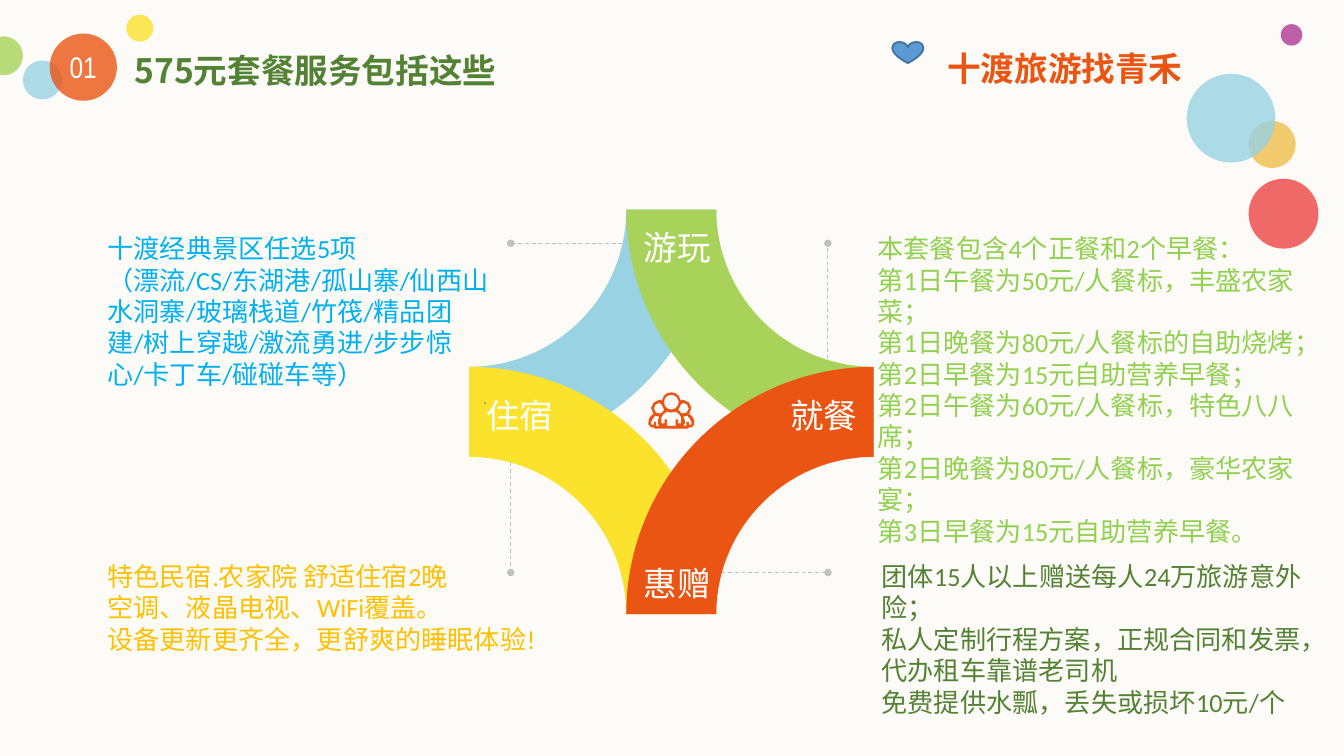
from math import cos, pi, sin

from lxml.etree import SubElement
from pptx import Presentation
from pptx.dml.color import RGBColor
from pptx.enum.dml import MSO_LINE
from pptx.enum.shapes import MSO_CONNECTOR, MSO_SHAPE
from pptx.enum.text import MSO_ANCHOR, MSO_AUTO_SIZE, PP_ALIGN
from pptx.oxml.ns import qn
from pptx.util import Inches, Pt

CREAM = RGBColor(0xFC, 0xFB, 0xF7)
WHITE = RGBColor(0xFF, 0xFF, 0xFF)
SKY = RGBColor(0x98, 0xD2, 0xE3)
YELLOW = RGBColor(0xFB, 0xE2, 0x2D)
GREEN = RGBColor(0xA9, 0xD2, 0x5A)
ORANGE = RGBColor(0xEA, 0x55, 0x14)
PURPLE = RGBColor(0xB0, 0x38, 0x96)
SAND = RGBColor(0xF0, 0xCA, 0x6C)
RED = RGBColor(0xEB, 0x45, 0x44)
BLUE = RGBColor(0x5B, 0x9B, 0xD5)
NAVY = RGBColor(0x43, 0x73, 0x9E)
SILVER = RGBColor(0xC0, 0xC0, 0xC0)
GREY = RGBColor(0x7F, 0x7F, 0x7F)
FOREST = RGBColor(0x54, 0x82, 0x35)
LIME = RGBColor(0x92, 0xD0, 0x50)
CYAN = RGBColor(0x00, 0xB0, 0xF0)
GOLD = RGBColor(0xFF, 0xC0, 0x00)


def style(p, size, color, font="Calibri", bold=False, align=PP_ALIGN.LEFT):
    p.alignment = align
    p.font.size = Pt(size)
    p.font.bold = bold
    p.font.color.rgb = color
    p.font.name = font
    SubElement(p._p.find(".//" + qn("a:defRPr")), qn("a:ea"), typeface=font)
    p._p.pPr.set("hangingPunct", "0")


def fill_frame(tf, lines, inset=True, wrap=True, **look):
    tf.word_wrap = wrap
    tf.auto_size = MSO_AUTO_SIZE.NONE
    tf.vertical_anchor = MSO_ANCHOR.TOP
    if not inset:
        tf.margin_left = tf.margin_right = tf.margin_top = tf.margin_bottom = 0
    for i, line in enumerate(lines):
        p = tf.add_paragraph() if i else tf.paragraphs[0]
        p.text = line
        style(p, **look)


def add_text(s, x, y, w, h, lines, **look):
    tf = s.shapes.add_textbox(Inches(x), Inches(y), Inches(w), Inches(h)).text_frame
    fill_frame(tf, lines, **look)
    return tf


def paint(sp, color, alpha=100):
    sp.shadow.inherit = False
    sp.fill.solid()
    sp.fill.fore_color.rgb = color
    sp.line.fill.background()
    if alpha < 100:
        clr = sp._element.spPr.find(".//" + qn("a:srgbClr"))
        SubElement(clr, qn("a:alpha"), val=str(alpha * 1000))


def add_bubble(s, x, y, d, color, alpha=80):
    sp = s.shapes.add_shape(MSO_SHAPE.OVAL, Inches(x), Inches(y), Inches(d), Inches(d))
    paint(sp, color, alpha)


def add_outline(s, contours, color):
    loops = [[(Inches(x), Inches(y)) for x, y in c] for c in contours]
    fb = s.shapes.build_freeform(*loops[0][0])
    for i, loop in enumerate(loops):
        if i:
            fb.move_to(*loop[0])
        fb.add_line_segments(loop[1:], close=True)
    paint(fb.convert_to_shape(), color)


def arc(cx, cy, r, start, sweep, steps=48):
    angles = [start + sweep * i / steps for i in range(steps + 1)]
    return [(cx + r * cos(a), cy + r * sin(a)) for a in angles]


def add_leader(s, x1, y1, x2, y2):
    c = s.shapes.add_connector(MSO_CONNECTOR.STRAIGHT, Inches(x1), Inches(y1),
                               Inches(x2), Inches(y2))
    c.line.color.rgb = SILVER
    c.line.width = Pt(0.5)
    c.line.dash_style = MSO_LINE.DASH
    ln = c._element.spPr.find(qn("a:ln"))
    SubElement(ln, qn("a:tailEnd"), type="oval", w="sm", len="sm")
    SubElement(c._element.spPr, qn("a:effectLst"))


def add_people(s, cx, y):
    def mirror(points):
        return [(-px, py) for px, py in reversed(points)]

    outer = [(0, 0), (3, 0.6), (5.5, 2.5), (7, 6), (9, 5.6), (13, 7.5), (15, 11.5),
             (13.3, 16), (15, 17.3), (16.5, 19.5), (17, 22), (17, 24), (15, 26),
             (13.3, 26), (12, 27), (0, 27)]
    body = [(0, 15), (3.3, 14.3), (6, 16.3), (7.3, 18.5), (7.3, 23), (5, 23),
            (5, 20), (3.3, 20), (3.3, 25), (0, 25)]
    side_body = [(11.3, 25), (11.3, 22), (13, 22), (13, 24), (15, 24), (15, 22),
                 (14, 20), (12, 17.3), (9, 18), (10, 21), (10, 23), (9, 25)]
    side_head = [(7.2, 9), (5.2, 13), (7, 15), (8.5, 15.8), (11.5, 15), (13, 12),
                 (11.7, 9), (9, 7.8)]
    contours = [outer + mirror(outer), body + mirror(body), arc(0, 7.3, 5.4, 0, 2 * pi)]
    for half in (side_body, side_head):
        contours += [half, mirror(half)]
    add_outline(s, [[(cx + px / 100, y + py / 100) for px, py in c] for c in contours],
                ORANGE)


def add_wheel(s, x, y, size):
    outer, inner = 1.84, 1.17
    corners = [(0, 0, 0, SKY), (0, 1, -pi / 2, YELLOW),
               (1, 0, pi / 2, GREEN), (1, 1, pi, ORANGE)]
    for col, row, start, color in corners:
        cx, cy = x + col * size, y + row * size
        ring = arc(cx, cy, outer, start, pi / 2)
        ring += arc(cx, cy, inner, start + pi / 2, -pi / 2)
        add_outline(s, [ring], color)
    add_people(s, x + size / 2, y + 1.36)

    left, right, top, bottom = x + 0.31, x + 2.67, y + 0.25, y + 2.7
    add_leader(s, x + 1.14, top, left, top)
    add_leader(s, left, y + 1.88, left, bottom)
    add_leader(s, x + 1.88, bottom, right, bottom)
    add_leader(s, right, y + 1.11, right, top)

    for label, dx, dy in [("游玩", 1.2, 0.08), ("就餐", 2.29, 1.33),
                          ("住宿", 0.03, 1.33), ("惠赠", 1.2, 2.58)]:
        add_text(s, x + dx, y + dy, 0.71, 0.4, [label], wrap=False, size=18, color=WHITE)


def add_heading(s, x, y, number, title):
    for dx, dy, d, color in [(1.06, 0, 0.2, YELLOW), (0, 0.16, 0.29, GREEN),
                             (0.29, 0.34, 0.29, SKY), (0.49, 0.14, 0.5, ORANGE)]:
        add_bubble(s, x + dx, y + dy, d, color)
    add_text(s, x + 0.56, y + 0.25, 0.36, 0.27, [number], inset=False, size=16,
             color=WHITE, font="Arial Narrow", align=PP_ALIGN.CENTER)
    sp = s.shapes.title
    sp.left, sp.top = Inches(x + 1.12), Inches(y + 0.26)
    sp.width, sp.height = Inches(3.04), Inches(0.3)
    fill_frame(sp.text_frame, [title], inset=False, size=18, color=FOREST,
               font="Noto Sans CJK JP", bold=True)


def add_slogan(s, x, y, slogan):
    for dx, dy, d, color, alpha in [(2.89, 0, 0.16, PURPLE, 80), (2.65, 0.72, 0.35, SAND, 100),
                                    (2.65, 1.15, 0.52, RED, 80), (2.19, 0.37, 0.66, SKY, 80)]:
        add_bubble(s, x + dx, y + dy, d, color, alpha)
    add_text(s, x + 0.31, y + 0.13, 2.03, 0.4, [slogan], wrap=False, size=18,
             color=ORANGE, bold=True)
    heart = s.shapes.add_shape(MSO_SHAPE.HEART, Inches(x), Inches(y + 0.13),
                               Inches(0.23), Inches(0.16))
    paint(heart, BLUE)
    heart.line.color.rgb = NAVY
    heart.line.width = Pt(1)


def add_details(s, x, y, w, h, color, lines):
    return add_text(s, x, y, w, h, lines, inset=False, size=14, color=color)


def main():
    prs = Presentation()
    prs.slide_width = Inches(10)
    prs.slide_height = prs.slide_width * 9 // 16
    s = prs.slides.add_slide(prs.slide_layouts[5])
    s.background.fill.solid()
    s.background.fill.fore_color.rgb = CREAM

    add_wheel(s, 3.49, 1.56, 3.01)
    add_heading(s, -0.12, 0.11, "01", "575元套餐服务包括这些")
    add_slogan(s, 6.64, 0.18, "十渡旅游找青禾")

    add_details(s, 6.53, 1.73, 3.47, 1.65, LIME, [
        "本套餐包含4个正餐和2个早餐：",
        "第1日午餐为50元/人餐标，丰盛农家菜；",
        "第1日晚餐为80元/人餐标的自助烧烤；第2日早餐为15元自助营养早餐；",
        "第2日午餐为60元/人餐标，特色八八席；",
        "第2日晚餐为80元/人餐标，豪华农家宴；\v第3日早餐为15元自助营养早餐。"])
    add_details(s, 6.56, 4.17, 3.48, 1.18, FOREST, [
        "团体15人以上赠送每人24万旅游意外险；",
        "私人定制行程方案，正规合同和发票，代办租车靠谱老司机",
        "免费提供水瓢，丢失或损坏10元/个"])
    tf = add_details(s, 0.8, 1.73, 2.85, 1.31, CYAN, [
        "十渡经典景区任选5项",
        "（漂流/CS/东湖港/孤山寨/仙西山水洞寨/玻璃栈道/竹筏/精品团建/树上穿越/激流勇进/步步惊心/卡丁车/碰碰车等）"])
    p = tf.add_paragraph()
    p.text = ". "
    style(p, 8, GREY, align=PP_ALIGN.RIGHT)
    add_details(s, 0.8, 4.17, 3.24, 0.71, GOLD, [
        "特色民宿.农家院 舒适住宿2晚",
        "空调、液晶电视、WiFi覆盖。",
        "设备更新更齐全，更舒爽的睡眠体验!"])

    prs.save("out.pptx")


if __name__ == "__main__":
    main()
